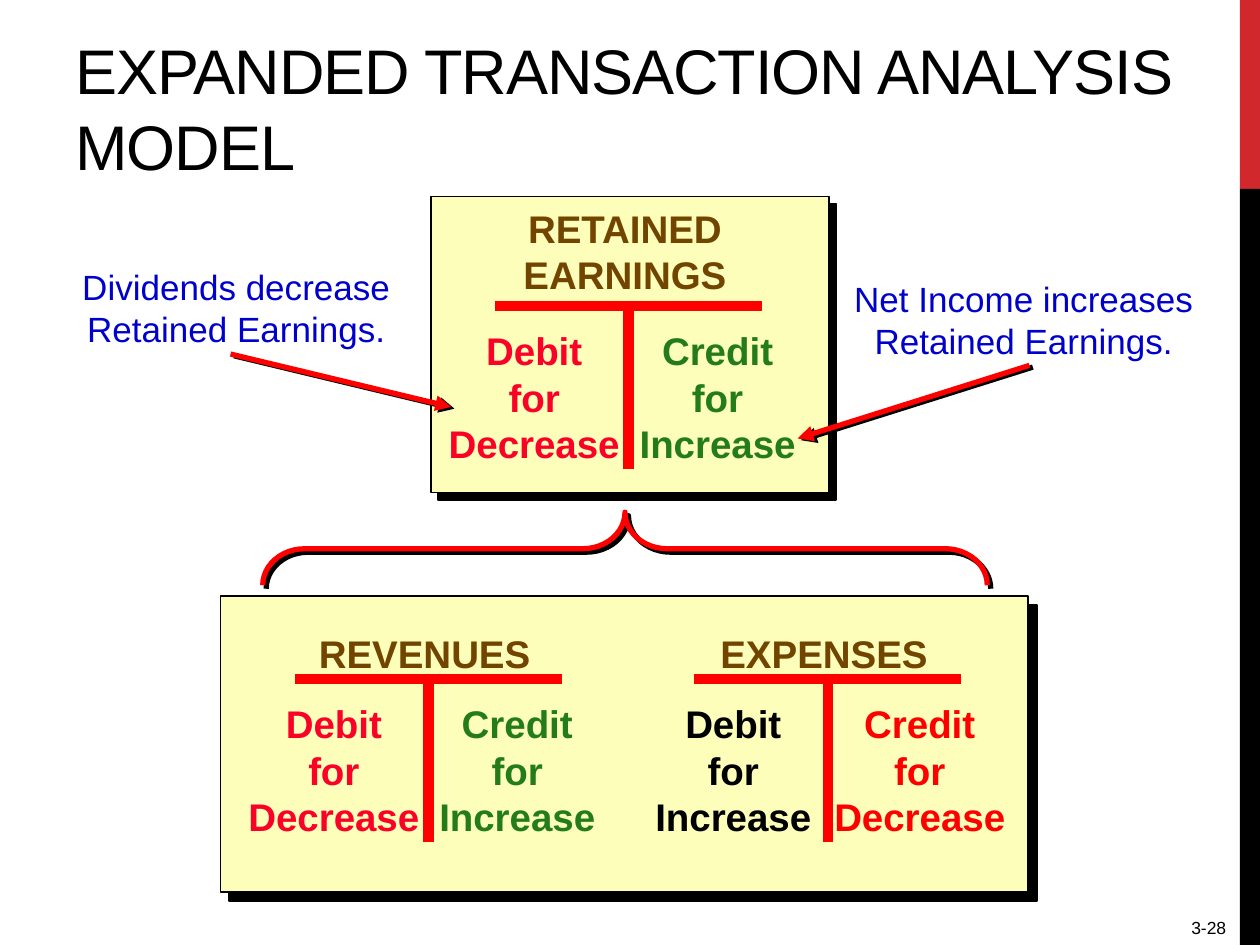
"""Build the expanded transaction analysis slide on a grid of 100 by 75 cells."""
from lxml import etree
from pptx import Presentation
from pptx.dml.color import RGBColor
from pptx.enum.shapes import MSO_CONNECTOR, MSO_SHAPE
from pptx.enum.text import MSO_ANCHOR, PP_ALIGN
from pptx.oxml.ns import qn
from pptx.util import Inches, Pt

LINE = MSO_CONNECTOR.STRAIGHT
RECT, BRACE = MSO_SHAPE.RECTANGLE, MSO_SHAPE.LEFT_BRACE
LEFT, MID, RIGHT = PP_ALIGN.LEFT, PP_ALIGN.CENTER, PP_ALIGN.RIGHT
TOP, LOW = MSO_ANCHOR.TOP, MSO_ANCHOR.BOTTOM

THEME = {
    "font": "Arial", "title": 36, "label": 22, "note": 20, "page": 10,
    "black": "000000", "red": "FF0000", "band": "D1282E", "cream": "FCFEB9",
    "brown": "714400", "rose": "FC0128", "green": "247C18", "blue": "0000CC",
    "bar": 6, "thin": 3, "edge": 1,
}
COLS, ROWS = 100, 75
TITLE = "EXPANDED TRANSACTION ANALYSIS MODEL"
PAGE = "3-28"
BANDS = [((98.4, 0, 1.6, 15), "band"), ((98.4, 15, 1.6, 60), "black")]
PANELS = [((17.5, 47.3, 64.1, 23.5), 7.1), ((34.2, 15.6, 31.6, 23.5), 5.7)]
DEBIT, CREDIT = "Debit\vfor\v", "Credit\vfor\v"
ACCOUNTS = [
    ("EXPENSES", 55.1, 53.9, 49.5, ("Increase", "black"), ("Decrease", "red"), 15.6),
    ("REVENUES", 23.4, 53.9, 49.5, ("Decrease", "rose"), ("Increase", "green"), 15.1),
    ("RETAINED EARNINGS", 39.3, 24.3, 15.8, ("Decrease", "rose"), ("Increase", "green"), 15.1),
]
NOTES = [
    ("Dividends decrease Retained Earnings.", (2.5, 20.6, 32.5, 7.7), (18.3, 28.1, 35.8, 32.3)),
    ("Net Income increases Retained Earnings.", (65, 21.5, 32.5, 7.7), (81.7, 29, 63.3, 34.8)),
]

deck = Presentation()
deck.slide_width, deck.slide_height = Inches(10), Inches(7.5)
slide = deck.slides.add_slide(deck.slide_layouts[6])
CELL_W, CELL_H = deck.slide_width / COLS, deck.slide_height / ROWS


def grid(box):
    return [round(v * (CELL_H if i % 2 else CELL_W)) for i, v in enumerate(box)]


def tint(name):
    return RGBColor.from_string(THEME[name])


def shade(item, dist=0, turn=45):
    props = item._element.spPr
    for old in props.findall(qn("a:effectLst")):
        props.remove(old)
    fx = etree.SubElement(props, qn("a:effectLst"))
    if dist:
        drop = etree.SubElement(fx, qn("a:outerShdw"), dist=str(Pt(dist)),
                                dir=str(turn * 60000), algn="ctr", rotWithShape="0")
        etree.SubElement(drop, qn("a:srgbClr"), val=THEME["black"])


def block(kind, box, fill=None, edge=None, width=0, dist=0):
    item = slide.shapes.add_shape(kind, *grid(box))
    if fill:
        item.fill.solid()
        item.fill.fore_color.rgb = tint(fill)
    else:
        item.fill.background()
    if edge:
        item.line.color.rgb = tint(edge)
        item.line.width = Pt(width)
    else:
        item.line.fill.background()
    item.shadow.inherit = False
    shade(item, dist)
    return item


def stroke(ends, width, arrow=False):
    item = slide.shapes.add_connector(LINE, *grid(ends))
    item.line.color.rgb = tint("red")
    item.line.width = Pt(width)
    if arrow:
        etree.SubElement(item.line._get_or_add_ln(), qn("a:tailEnd"), type="triangle")
    shade(item, 2.2 if arrow else 0, 27)


def write(text, box, size, color, align=MID, bold=False, anchor=TOP, pad=0.1, track=0):
    frame = slide.shapes.add_textbox(*grid(box)).text_frame
    frame.word_wrap = True
    frame.vertical_anchor = anchor
    frame.margin_left = frame.margin_right = Inches(pad)
    para = frame.paragraphs[0]
    para.text = text
    para.alignment = align
    for run in para.runs:
        font = run.font
        font.name, font.size, font.bold = THEME["font"], Pt(THEME[size]), bold
        font.color.rgb = tint(color)
        if track:
            run._r.get_or_add_rPr().set("spc", str(track))


def account(name, x, y, head, debit, credit, wide):
    stroke((x, y, x + 21.2, y), THEME["bar"])
    stroke((x + 10.6, y + 0.4, x + 10.6, y + 12.9), THEME["bar"])
    write(name, (x - 6, head, 32.6, y - head), "label", "brown", bold=True)
    sides = [(DEBIT, debit, x - 4.9, 16), (CREDIT, credit, x + 10.1, wide)]
    for lead, (effect, color), left, width in sides:
        write(lead + effect, (left, y + 1.2, width, 12.1), "label", color, bold=True, pad=0)


for box, fill in BANDS:
    block(RECT, box, fill)
for box, dist in PANELS:
    block(RECT, box, "cream", "black", THEME["edge"], dist)
for row in ACCOUNTS:
    account(*row)
write(TITLE, (5, 0, 91.7, 15), "title", "black", LEFT, anchor=LOW, track=-60)
for text, box, ends in NOTES:
    write(text, box, "note", "blue")
    stroke(ends, THEME["thin"], True)
brace = block(BRACE, (46.7, 14.8, 5.8, 57.5), None, "red", THEME["thin"], 2.8)
brace.rotation = 90
brace.adjustments[0], brace.adjustments[1] = 0.575, 0.5
write(PAGE, (85, 72.3, 13.3, 2.7), "page", "black", RIGHT)
deck.save("out.pptx")
